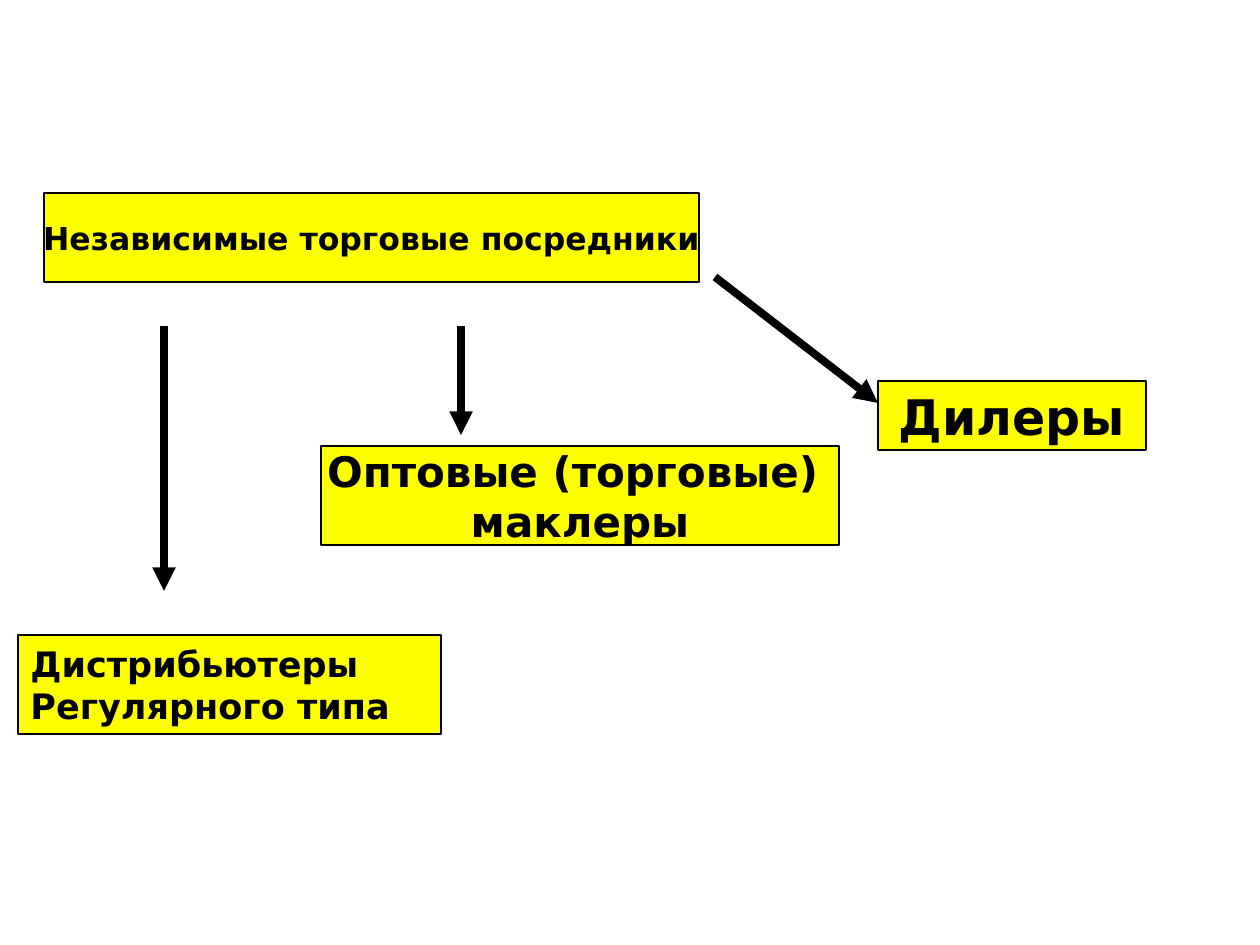
from lxml import etree
from pptx import Presentation
from pptx import util as u
from pptx.dml.color import RGBColor
from pptx.enum import shapes, text
from pptx.oxml.ns import qn

SLIDE_W, SLIDE_H = 1260, 945
SCALE = u.Inches(10) / SLIDE_W
YELLOW = RGBColor(0xFF, 0xFF, 0x00)
BLACK = RGBColor(0x00, 0x00, 0x00)
FONT = "DejaVu Sans"
CENTER, LEFT = text.PP_ALIGN.CENTER, text.PP_ALIGN.LEFT


def px(length):
    return u.Emu(round(length * SCALE))


def add_label(slide, box, wording, size, align=CENTER):
    """Yellow framed box with bold black wording."""
    label = slide.shapes.add_shape(shapes.MSO_SHAPE.RECTANGLE, *map(px, box))
    label.shadow.inherit = False
    label.fill.solid()
    label.fill.fore_color.rgb = YELLOW
    label.line.color.rgb = BLACK
    label.line.width = u.Pt(0.75)
    frame = label.text_frame
    frame.word_wrap = False
    frame.vertical_anchor = text.MSO_ANCHOR.MIDDLE
    frame.text = wording
    for paragraph in frame.paragraphs:
        paragraph.alignment = align
        for run in paragraph.runs:
            run.font.name = FONT
            run.font.size = u.Pt(size)
            run.font.bold = True
            run.font.color.rgb = BLACK


def add_arrow(slide, start, end):
    """Thick black arrow from start to end."""
    arrow = slide.shapes.add_connector(
        shapes.MSO_CONNECTOR.STRAIGHT, *map(px, start + end))
    arrow.line.color.rgb = BLACK
    arrow.line.width = u.Pt(4.5)
    etree.SubElement(arrow.line._get_or_add_ln(), qn("a:tailEnd"), type="triangle")
    etree.SubElement(arrow._element.spPr, qn("a:effectLst"))


def add_intermediaries(slide, box):
    """Tree of independent trade intermediaries, placed from the box's corner."""
    left, top, _, _ = box

    # Parent and its three kinds
    for (x, y, w, h), wording, size, align in (
        ((26, 0, 655, 89), "Независимые торговые посредники", 18, CENTER),
        ((0, 442, 423, 99), "Дистрибьютеры\nРегулярного типа", 20, LEFT),
        ((303, 253, 518, 99), "Оптовые (торговые) \nмаклеры", 24, CENTER),
        ((860, 188, 268, 69), "Дилеры", 28, CENTER),
    ):
        add_label(slide, (left + x, top + y, w, h), wording, size, align)

    # Arrows from the parent to each kind
    for (x1, y1), (x2, y2) in (
        ((146, 133), (146, 398)),
        ((443, 133), (443, 242)),
        ((697, 84), (860, 210)),
    ):
        add_arrow(slide, (left + x1, top + y1), (left + x2, top + y2))


def main():
    deck = Presentation()
    deck.slide_width, deck.slide_height = px(SLIDE_W), px(SLIDE_H)
    slide = deck.slides.add_slide(deck.slide_layouts[6])
    add_intermediaries(slide, (18, 193, 1128, 541))
    deck.save("out.pptx")


if __name__ == "__main__":
    main()
